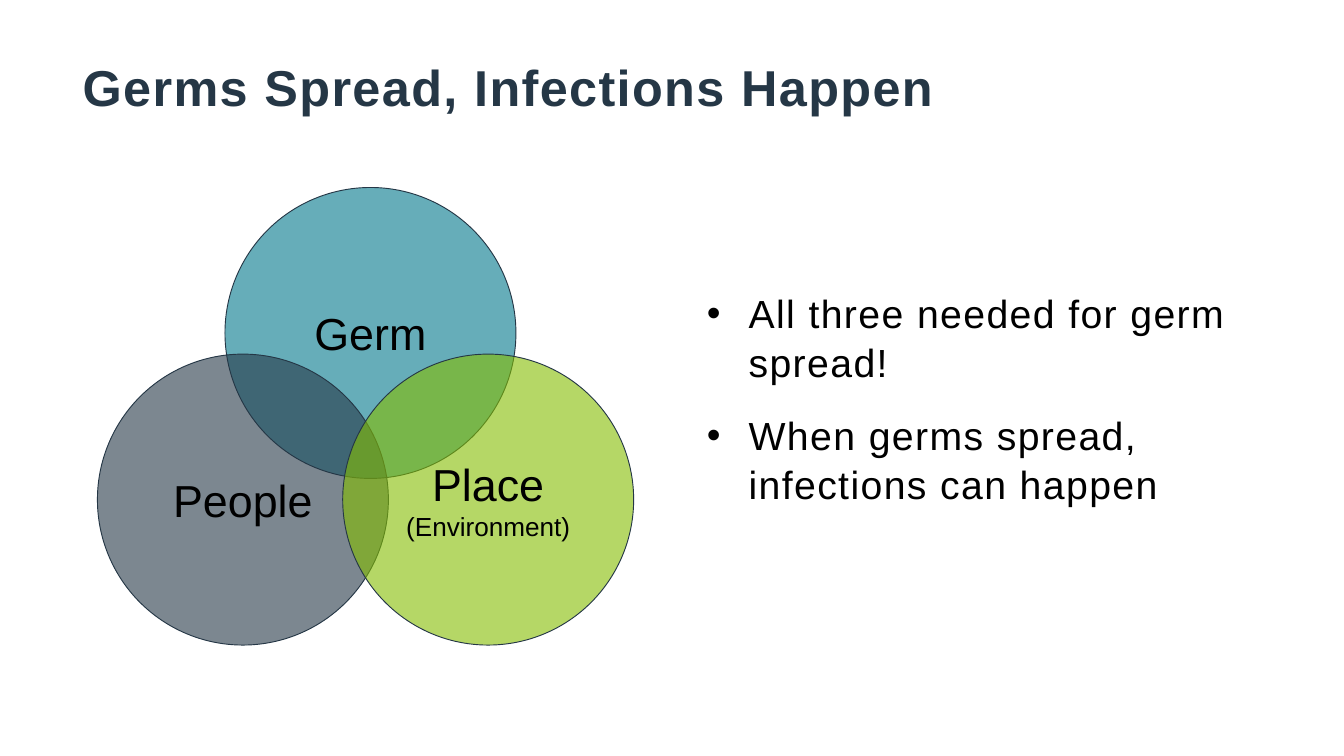
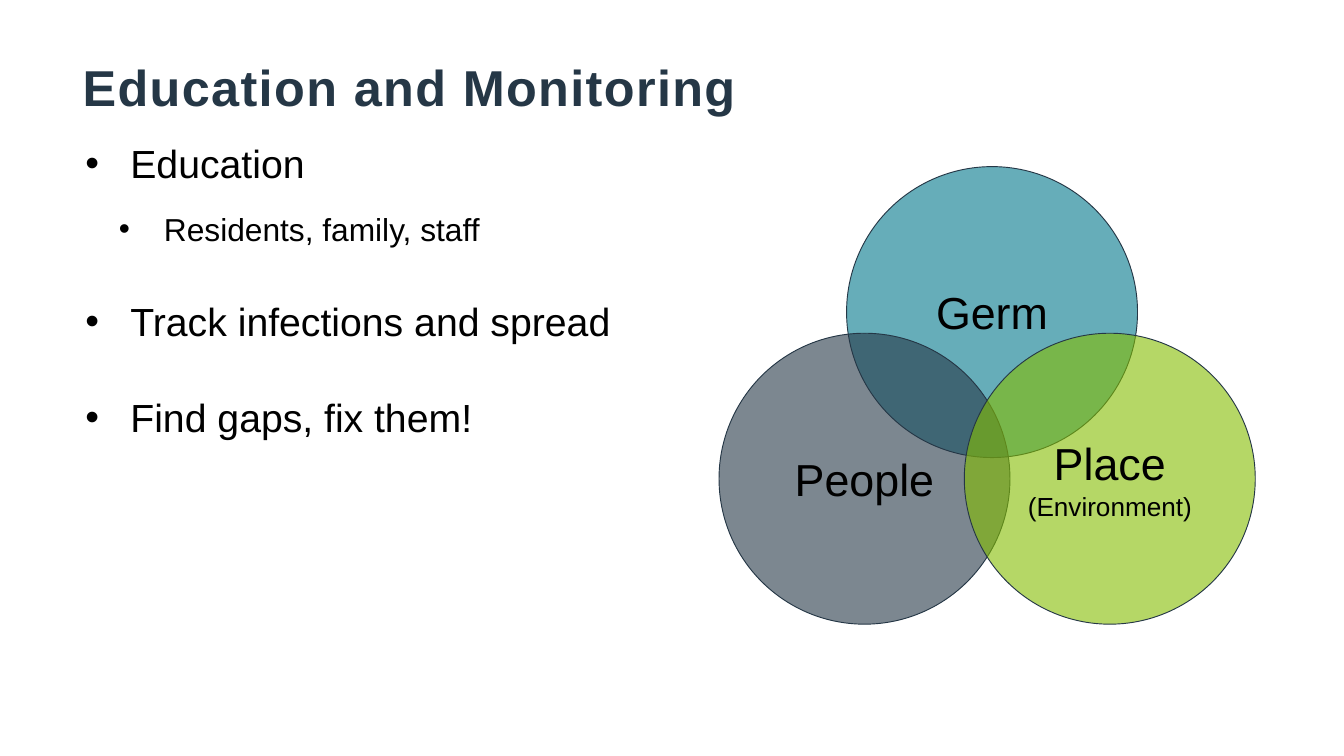
from collections import namedtuple

from lxml import etree
from pptx import Presentation
from pptx.dml.color import RGBColor
from pptx.enum.shapes import MSO_SHAPE
from pptx.enum.text import MSO_ANCHOR, MSO_AUTO_SIZE, PP_ALIGN
from pptx.oxml.ns import qn
from pptx.util import Inches, Pt

SLIDE_WIDTH, SLIDE_HEIGHT = Inches(20), Inches(11.25)
FONT = "Arial"
COLORS = {
    "navy": "253746",
    "teal": "00778B",
    "green": "84BD00",
    "black": "000000",
    "white": "FFFFFF",
}
TITLE_AND_CONTENT = 1
TRACKING = 1.5
BODY_SPACING = 1.04
CIRCLE_OPACITY = 60

Box = namedtuple("Box", "left top width height")
Bullet = namedtuple("Bullet", "text size margin hang before after spacing")
Circle = namedtuple("Circle", "lines color across down")


def share_box(left, top, width, height):
    """Turn percentages of the slide's size into a box of lengths."""
    return Box(int(SLIDE_WIDTH * left / 100), int(SLIDE_HEIGHT * top / 100),
               int(SLIDE_WIDTH * width / 100), int(SLIDE_HEIGHT * height / 100))


TITLE_BOX = share_box(5.65, 2.49, 88.75, 12.89)
CIRCLE_SIZE = int(SLIDE_WIDTH * 21.65 / 100)

# Positions are shares of the room a circle has inside the diagram's box.
CIRCLES = [
    Circle([("Germ", 48)], "teal", 0.52, 0),
    Circle([("People", 48)], "navy", 0, 1),
    Circle([("Place", 48), ("(Environment)", 28)], "green", 1, 1),
]


def color(name):
    return RGBColor.from_string(COLORS[name])


def style_runs(paragraph, size, color_name="black", bold=False, tracking=0):
    for run in paragraph.runs:
        run.font.name = FONT
        run.font.size = Pt(size)
        run.font.bold = bold
        run.font.color.rgb = color(color_name)
        if tracking:
            run.font._element.set("spc", str(int(tracking * 100)))


def place_placeholder(shape, box, top_inset):
    shape.left, shape.top, shape.width, shape.height = box
    frame = shape.text_frame
    frame.auto_size = MSO_AUTO_SIZE.NONE
    frame.vertical_anchor = MSO_ANCHOR.TOP
    frame.word_wrap = True
    frame.margin_left = frame.margin_right = Inches(0.1)
    frame.margin_top = Inches(top_inset)
    return frame


def add_titled_slide(presentation, title):
    slide = presentation.slides.add_slide(presentation.slide_layouts[TITLE_AND_CONTENT])
    slide.background.fill.solid()
    slide.background.fill.fore_color.rgb = color("white")
    frame = place_placeholder(slide.shapes.title, TITLE_BOX, 0.1)
    frame.text = title
    paragraph = frame.paragraphs[0]
    paragraph.alignment = PP_ALIGN.LEFT
    paragraph.line_spacing = 1.5
    style_runs(paragraph, 54, "navy", bold=True, tracking=TRACKING)
    return slide


def set_bullet(paragraph, margin, hang):
    properties = paragraph._p.get_or_add_pPr()
    properties.set("marL", str(Inches(margin)))
    properties.set("indent", str(-Inches(hang)))
    etree.SubElement(properties, qn("a:buChar")).set("char", "•")


def fill_bullets(slide, box, bullets, tracking=0):
    frame = place_placeholder(slide.placeholders[1], box, 0.08)
    frame.text = "\n".join(bullet.text for bullet in bullets)
    for paragraph, bullet in zip(frame.paragraphs, bullets):
        set_bullet(paragraph, bullet.margin, bullet.hang)
        paragraph.alignment = PP_ALIGN.LEFT
        paragraph.line_spacing = bullet.spacing
        paragraph.space_before = Pt(bullet.before)
        paragraph.space_after = Pt(bullet.after)
        style_runs(paragraph, bullet.size, tracking=tracking)


def add_circle(shapes, box, circle):
    left = box.left + int(circle.across * (box.width - CIRCLE_SIZE))
    top = box.top + int(circle.down * (box.height - CIRCLE_SIZE))
    shape = shapes.add_shape(MSO_SHAPE.FLOWCHART_CONNECTOR, left, top,
                             CIRCLE_SIZE, CIRCLE_SIZE)
    shape.shadow.inherit = False
    shape.fill.solid()
    shape.fill.fore_color.rgb = color(circle.color)
    fill_color = shape._element.spPr.find(qn("a:solidFill"))[0]
    etree.SubElement(fill_color, qn("a:alpha")).set("val", str(CIRCLE_OPACITY * 1000))
    shape.line.color.rgb = color("navy")
    shape.line.width = Pt(1)

    frame = shape.text_frame
    frame.word_wrap = True
    frame.vertical_anchor = MSO_ANCHOR.MIDDLE
    frame.text = "\n".join(text for text, _ in circle.lines)
    for paragraph, (_, size) in zip(frame.paragraphs, circle.lines):
        paragraph.alignment = PP_ALIGN.CENTER
        style_runs(paragraph, size)


def add_venn(slide, box):
    group = slide.shapes.add_group_shape()
    for circle in CIRCLES:
        add_circle(group.shapes, box, circle)


def build_spread_slide(presentation):
    slide = add_titled_slide(presentation, "Germs Spread, Infections Happen")
    fill_bullets(slide, share_box(52.1, 37.33, 42.3, 12.89), [
        Bullet("All three needed for germ spread!", 42, 0.62, 0.62, 0, 0, BODY_SPACING),
        Bullet("When germs spread, infections can happen", 42, 0.62, 0.62, 26, 0,
               BODY_SPACING),
    ], tracking=TRACKING)
    add_venn(slide, share_box(7.25, 24.8, 39.9, 60.53))


def build_monitoring_slide(presentation):
    slide = add_titled_slide(presentation, "Education and Monitoring")
    tall = Pt(79.2)
    fill_bullets(slide, share_box(2.5, 17.42, 69.45, 12.89), [
        Bullet("Education", 42, 1.34, 0.67, 0, 24, BODY_SPACING),
        Bullet("Residents, family, staff", 34, 1.84, 0.67, 0, 24, BODY_SPACING),
        Bullet("Track infections and spread", 42, 1.34, 0.67, 0, 24, tall),
        Bullet("Find gaps, fix them!", 42, 1.34, 0.67, 0, 24, tall),
    ])
    slide.placeholders[1].text_frame.paragraphs[1].level = 1
    add_venn(slide, share_box(53.5, 22.04, 39.9, 60.53))


def main():
    presentation = Presentation()
    presentation.slide_width = SLIDE_WIDTH
    presentation.slide_height = SLIDE_HEIGHT
    build_spread_slide(presentation)
    build_monitoring_slide(presentation)
    presentation.save("out.pptx")


if __name__ == "__main__":
    main()
